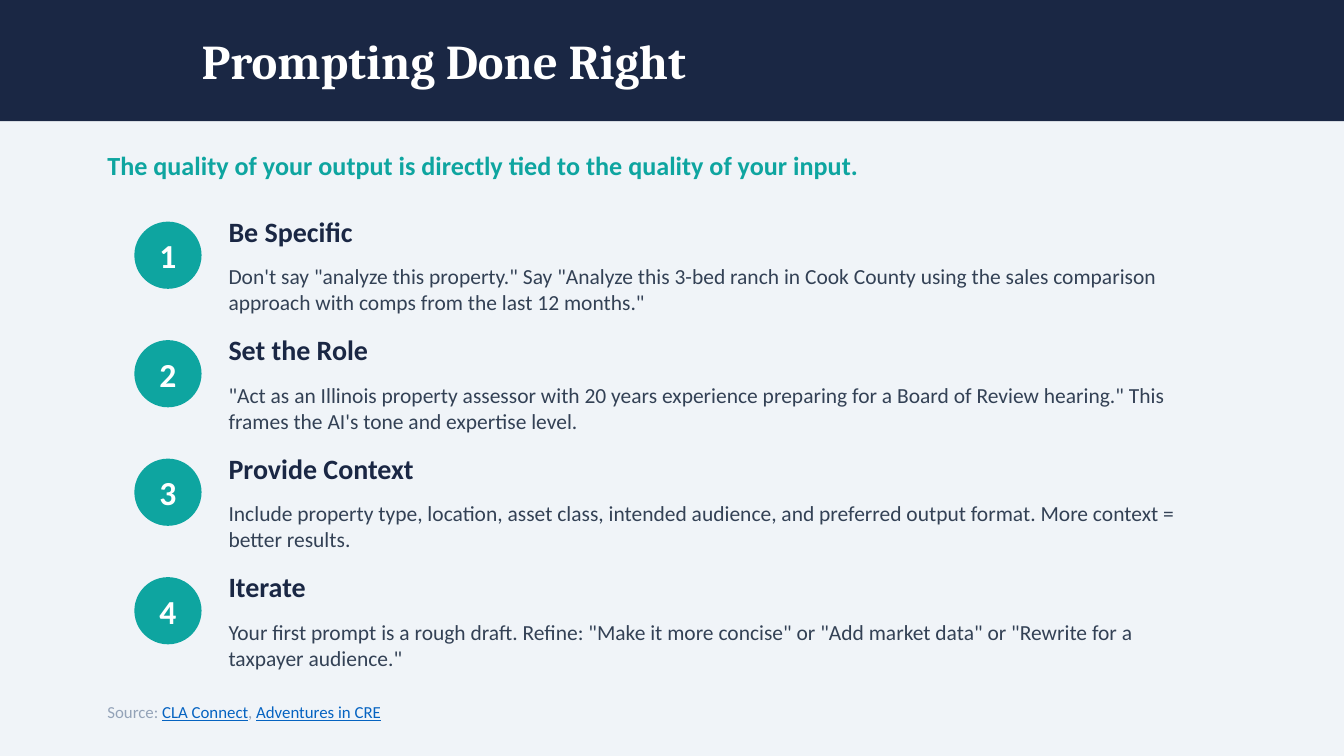
from pptx import Presentation
from pptx.dml.color import RGBColor
from pptx.enum.shapes import MSO_SHAPE as Shape
from pptx.enum.text import MSO_ANCHOR as Anchor, PP_ALIGN as Align
from pptx.util import Cm, Pt

NAVY, TEAL, WHITE = "1A2744", "0EA5A0", "FFFFFF"
SLATE, GREY, LINK, PALE = "334155", "94A3B8", "0563C1", "F0F4F8"

TIPS = [
    ("Be Specific",
     'Don\'t say "analyze this property." Say "Analyze this 3-bed ranch in Cook County '
     'using the sales comparison approach with comps from the last 12 months."'),
    ("Set the Role",
     '"Act as an Illinois property assessor with 20 years experience preparing for a '
     'Board of Review hearing." This frames the AI\'s tone and expertise level.'),
    ("Provide Context",
     "Include property type, location, asset class, intended audience, and preferred "
     "output format. More context = better results."),
    ("Iterate",
     'Your first prompt is a rough draft. Refine: "Make it more concise" or '
     '"Add market data" or "Rewrite for a taxpayer audience."'),
]
FIRST_TIP_TOP, TIP_STEP = 4.19, 2.24


def paint(color_format, hex_color):
    color_format.rgb = RGBColor.from_string(hex_color)


class SlideBuilder:
    """Holds the text style and the current slide; places elements in cm."""

    body_font = "Calibri"
    title_font = "Cambria"

    def __init__(self, slide, background):
        self.slide = slide
        fill = slide.background.fill
        fill.solid()
        paint(fill.fore_color, background)

    def shape(self, preset, left, top, width, height, color):
        shape = self.slide.shapes.add_shape(
            preset, Cm(left), Cm(top), Cm(width), Cm(height))
        shape.shadow.inherit = False
        shape.fill.solid()
        paint(shape.fill.fore_color, color)
        shape.line.fill.background()
        return shape

    def text(self, left, top, width, height, runs, size, bold=False, font=None):
        box = self.slide.shapes.add_textbox(Cm(left), Cm(top), Cm(width), Cm(height))
        self.fill_frame(box.text_frame, runs, size, bold, font)

    def badge(self, left, top, diameter, label):
        circle = self.shape(Shape.OVAL, left, top, diameter, diameter, TEAL)
        self.fill_frame(circle.text_frame, [(label, WHITE)], 18, True,
                        align=Align.CENTER)

    def fill_frame(self, frame, runs, size, bold=False, font=None, align=Align.LEFT):
        """Fill a frame with (text, colour) runs; link-coloured runs are underlined."""
        frame.word_wrap = True
        frame.vertical_anchor = Anchor.MIDDLE
        frame.margin_left = frame.margin_right = 0
        frame.margin_top = frame.margin_bottom = 0
        paragraph = frame.paragraphs[0]
        paragraph.alignment = align
        for words, color in runs:
            run = paragraph.add_run()
            run.text = words
            run.font.name = font or self.body_font
            run.font.size = Pt(size)
            run.font.bold = bold
            run.font.underline = color == LINK
            paint(run.font.color, color)


def main():
    deck = Presentation()
    deck.slide_width, deck.slide_height = Cm(25.4), Cm(14.29)
    page = SlideBuilder(deck.slides.add_slide(deck.slide_layouts[6]), PALE)

    page.shape(Shape.RECTANGLE, 0, 0, 25.4, 2.29, NAVY)
    page.text(3.81, 0, 20.32, 2.29, [("Prompting Done Right", WHITE)],
              26, True, page.title_font)
    page.text(2.03, 2.67, 21.34, 0.89,
              [("The quality of your output is directly tied to the quality of your input.",
                TEAL)], 14, True)

    for index, (heading, advice) in enumerate(TIPS):
        top = FIRST_TIP_TOP + index * TIP_STEP
        page.badge(2.54, top, 1.27, str(index + 1))
        page.text(4.32, top - 0.2, 18.54, 0.76, [(heading, NAVY)], 15, True)
        page.text(4.32, top + 0.64, 18.54, 1.27, [(advice, SLATE)], 11.5)

    page.text(2.03, 13.08, 21.34, 0.76,
              [("Source: ", GREY), ("CLA Connect", LINK),
               (", ", GREY), ("Adventures in CRE", LINK)], 9)

    deck.save("out.pptx")


if __name__ == "__main__":
    main()
